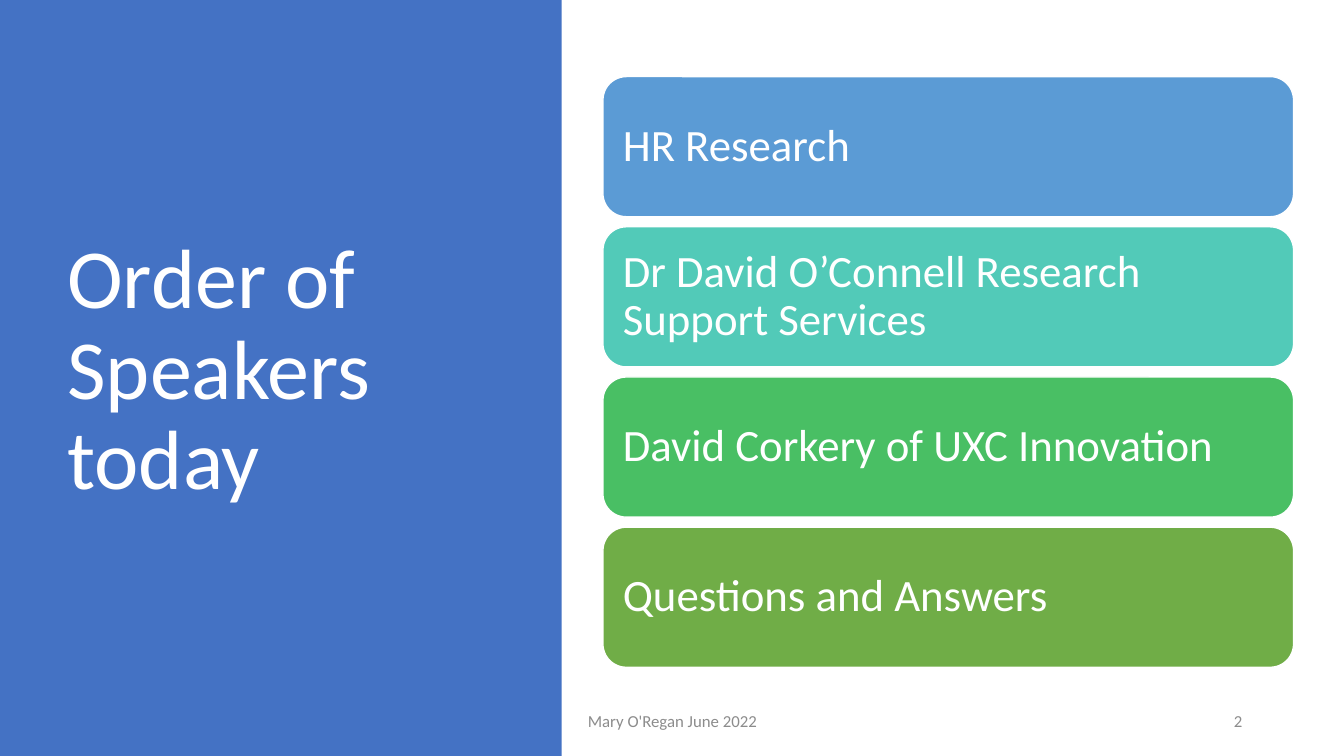
import dataclasses

import pptx
import pptx.dml.color
import pptx.enum.shapes
import pptx.enum.text
import pptx.util

RGBColor = pptx.dml.color.RGBColor
Align = pptx.enum.text.PP_ALIGN
Kind = pptx.enum.shapes.MSO_SHAPE

WHITE = RGBColor(0xFF, 0xFF, 0xFF)
GREY = RGBColor(0x8C, 0x8C, 0x8C)
ROYAL = RGBColor(0x44, 0x72, 0xC4)
SKY = RGBColor(0x5B, 0x9B, 0xD5)
TEAL = RGBColor(0x52, 0xCA, 0xB8)
GREEN = RGBColor(0x49, 0xBF, 0x64)
OLIVE = RGBColor(0x70, 0xAD, 0x47)

SCALE = 9144
FONT = "Calibri"
TOP = 76
STEP = 149


@dataclasses.dataclass(frozen=True)
class Speaker:
    name: str
    color: RGBColor


SPEAKERS = [
    Speaker("HR Research", SKY),
    Speaker("Dr David O’Connell Research Support Services", TEAL),
    Speaker("David Corkery of UXC Innovation", GREEN),
    Speaker("Questions and Answers", OLIVE),
]


def px(count: int) -> int:
    return pptx.util.Emu(count * SCALE)


def write(shape, text: str, *, size: int, color: RGBColor = WHITE,
          align=Align.LEFT, lead: float = 1.0, inset: int | None = None) -> None:
    frame = shape.text_frame
    frame.word_wrap = True
    frame.vertical_anchor = pptx.enum.text.MSO_ANCHOR.MIDDLE
    if inset is not None:
        frame.margin_left = frame.margin_right = px(inset)
        frame.margin_top = frame.margin_bottom = px(inset)
    para = frame.paragraphs[0]
    para.alignment = align
    para.line_spacing = lead
    run = para.add_run()
    run.text = text
    run.font.name = FONT
    run.font.size = pptx.util.Pt(size)
    run.font.color.rgb = color


def label(slide, box: tuple[int, int, int, int], text: str, **style) -> None:
    write(slide.shapes.add_textbox(*map(px, box)), text, **style)


def block(slide, kind, box: tuple[int, int, int, int], color: RGBColor):
    shape = slide.shapes.add_shape(kind, *map(px, box))
    shape.shadow.inherit = False
    shape.fill.solid()
    shape.fill.fore_color.rgb = color
    shape.line.fill.background()
    return shape


def card(slide, row: int, item: Speaker) -> None:
    box = (598, TOP + row * STEP, 685, 139)
    shape = block(slide, Kind.ROUNDED_RECTANGLE, box, item.color)
    shape.line.color.rgb = WHITE
    shape.line.width = pptx.util.Pt(1)
    write(shape, item.name, size=32, lead=0.9, inset=13)


def main() -> None:
    deck = pptx.Presentation()
    deck.slide_width = px(1333)
    deck.slide_height = px(750)
    slide = deck.slides.add_slide(deck.slide_layouts[6])
    block(slide, Kind.RECTANGLE, (0, 0, 557, 750), ROYAL)
    label(slide, (57, 68, 416, 602), "Order of Speakers today", size=60, lead=0.9)
    label(slide, (442, 695, 450, 40), "Mary O'Regan June 2022",
          size=12, color=GREY, align=Align.CENTER)
    label(slide, (942, 695, 300, 40), "2",
          size=12, color=GREY, align=Align.RIGHT)
    for row, item in enumerate(SPEAKERS):
        card(slide, row, item)
    deck.save("out.pptx")


if __name__ == "__main__":
    main()
